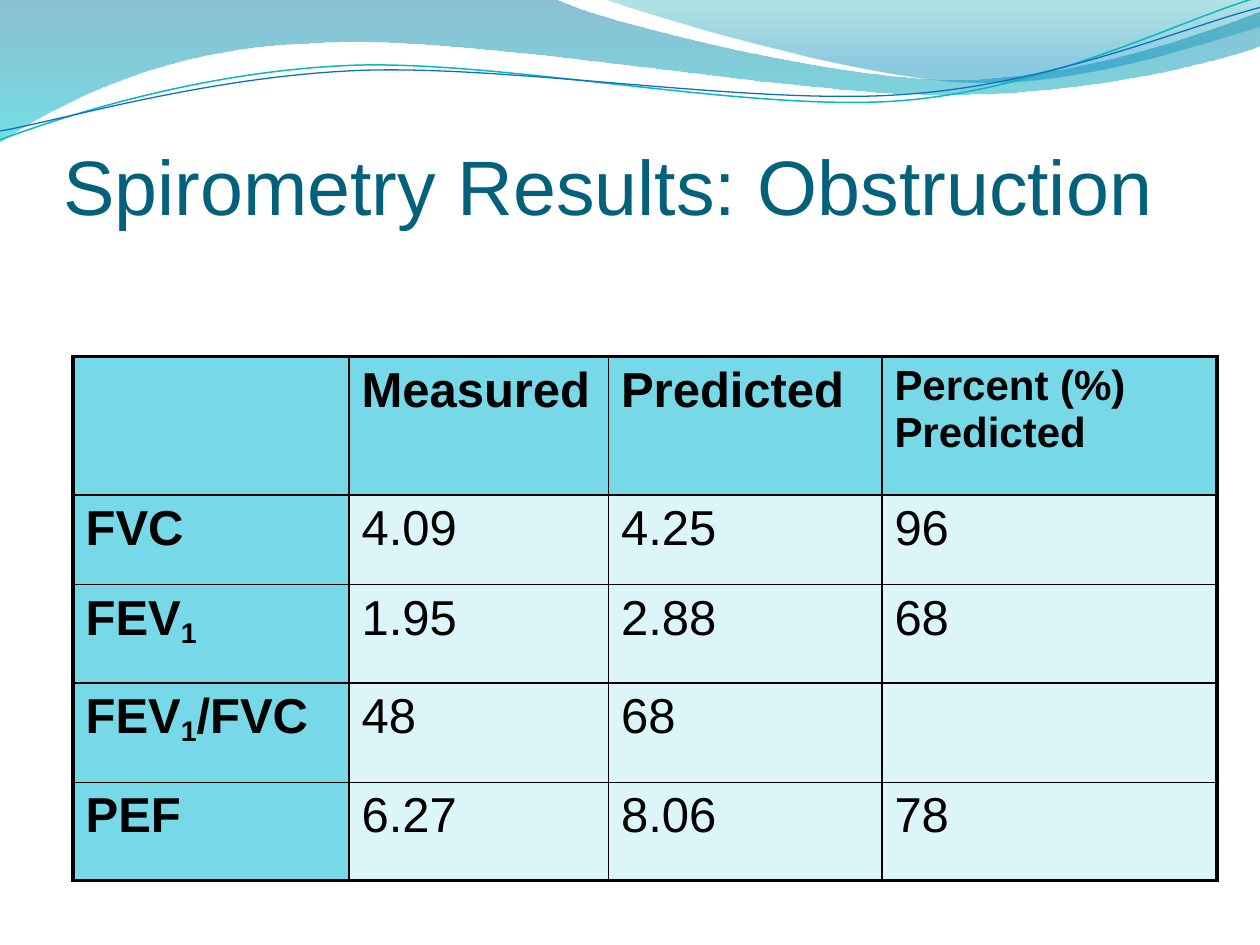
import math
from dataclasses import dataclass
from typing import Optional

import pptx
import pptx.dml.color
import pptx.enum.text
import pptx.oxml
import pptx.oxml.ns
import pptx.util
from pptx.util import Inches


@dataclass(frozen=True)
class Theme:
    font: str = "Arial"
    title: str = "04617B"
    ink: str = "000000"
    label_fill: str = "77D9E8"
    value_fill: str = "DBF5F9"
    title_size: float = 44.1
    body_size: float = 28
    small_size: float = 24
    inner_border: float = 1
    outer_border: float = 2.25


@dataclass(frozen=True)
class Stop:
    position: float
    color: str
    alpha: int  # percent


@dataclass(frozen=True)
class Wave:
    """Path steps hold one point for a straight edge, three for a Bezier curve."""
    start: tuple
    steps: list
    stops: Optional[tuple] = None
    line: Optional[tuple] = None  # colour, width
    tilt: float = 0
    center: tuple = (0, 0)


THEME = Theme()
UNITS = 1000  # outline units per inch

WAVES = [
    Wave((0, 0), [
        [(4.4, -0.01)],
        [(4.76, 0.17), (6.64, 0.63), (7.58, 0.63)],
        [(8.53, 0.63), (9.58, 0.26), (10, 0.09)],
        [(10.01, 0.36)],
        [(9.83, 0.44), (8.7, 0.76), (7.46, 0.75)],
        [(6.22, 0.75), (3.82, 0.28), (2.57, 0.34)],
        [(1.29, 0.36), (0.46, 0.83), (-0.01, 1.13)],
    ], stops=(Stop(0, "0074A1", 45), Stop(1, "00C6CF", 55))),
    Wave((4.79, -0.01), [
        [(5.09, 0.11), (6.82, 0.62), (7.69, 0.65)],
        [(8.56, 0.69), (9.61, 0.32), (10, 0.21)],
        [(10, 0)],
    ], stops=(Stop(0, "00A1A9", 30), Stop(0.8, "008BBF", 45))),
    Wave((0, 1.11), [
        [(0.48, 0.93), (1.58, 0.57), (2.77, 0.52)],
        [(3.95, 0.47), (5.93, 0.89), (7.13, 0.8)],
        [(8.33, 0.71), (9.38, 0.15), (9.98, -0.02)],
    ], line=("0AB8BF", 0.85), tilt=-2.7, center=(4.99, 0.58)),
    Wave((0, 1.04), [
        [(0.47, 0.96), (1.64, 0.61), (2.83, 0.56)],
        [(4.03, 0.51), (5.97, 0.84), (7.17, 0.75)],
        [(8.36, 0.67), (9.41, 0.21), (10, 0.06)],
    ], line=("0F6FC6", 0.75), tilt=-2.7, center=(5, 0.59)),
]

# Text between underscores is subscript
RESULTS = [
    ["", "Measured", "Predicted", "Percent (%) Predicted"],
    ["FVC", "4.09", "4.25", "96"],
    ["FEV_1_", "1.95", "2.88", "68"],
    ["FEV_1_/FVC", "48", "68", ""],
    ["PEF", "6.27", "8.06", "78"],
]
COLUMN_WIDTHS = [2.19, 2.06, 2.17, 2.66]
ROW_HEIGHTS = [1.1, 0.71, 0.78, 0.79, 0.78]


def rgb(color: str) -> pptx.dml.color.RGBColor:
    return pptx.dml.color.RGBColor.from_string(color)


def write(tf, text: str, *, size: float, color: str, bold: bool = False) -> None:
    p = tf.paragraphs[0]
    for i, part in enumerate(text.split("_")):
        if not part:
            continue
        r = p.add_run()
        r.text = part
        r.font.name = THEME.font
        r.font.size = pptx.util.Pt(size)
        r.font.bold = bold
        r.font.color.rgb = rgb(color)
        if i % 2:
            r.font._element.set("baseline", "-16000")


def turn(point: tuple, center: tuple, degrees: float) -> tuple:
    """Turn a point in inches about the centre; give it in outline units."""
    angle = math.radians(degrees)
    x, y = point[0] - center[0], point[1] - center[1]
    return (round(UNITS * (center[0] + x * math.cos(angle) - y * math.sin(angle))),
            round(UNITS * (center[1] + x * math.sin(angle) + y * math.cos(angle))))


def draw_wave(shapes, wave: Wave) -> None:
    # The outline is laid level, then the shape itself is tilted
    start = turn(wave.start, wave.center, -wave.tilt)
    steps = [[turn(q, wave.center, -wave.tilt) for q in step] for step in wave.steps]
    anchors = [step[-1] for step in steps]
    builder = shapes.build_freeform(*start, scale=Inches(1) / UNITS)
    builder.add_line_segments(anchors, close=wave.stops is not None)
    sp = builder.convert_to_shape()

    # Bend the straight segments that have control points
    left, top = (min(values) for values in zip(start, *anchors))
    segments = list(sp._element.iter(pptx.oxml.ns.qn("a:lnTo")))
    for segment, step in zip(segments, steps):
        if len(step) == 3:
            pts = "".join(f'<a:pt x="{x - left}" y="{y - top}"/>' for x, y in step)
            segment.getparent().replace(segment, pptx.oxml.parse_xml(
                f'<a:cubicBezTo {pptx.oxml.ns.nsdecls("a")}>{pts}</a:cubicBezTo>'))

    sp.shadow.inherit = False
    sp.rotation = wave.tilt % 360
    if wave.stops:
        sp.line.fill.background()
        sp.fill.gradient()
        sp.fill.gradient_angle = 270
        for gs, stop in zip(sp.fill.gradient_stops, wave.stops):
            gs.color.rgb = rgb(stop.color)
            gs.position = stop.position
            clr = gs._gs.find(pptx.oxml.ns.qn("a:srgbClr"))
            clr.append(pptx.oxml.parse_xml(
                f'<a:alpha {pptx.oxml.ns.nsdecls("a")} val="{stop.alpha * 1000}"/>'))
    else:
        color, width = wave.line
        sp.fill.background()
        sp.line.color.rgb = rgb(color)
        sp.line.width = pptx.util.Pt(width)


def set_borders(cell, outer: dict) -> None:
    for side, is_outer in outer.items():
        width = pptx.util.Pt(THEME.outer_border if is_outer else THEME.inner_border)
        cell._tc.get_or_add_tcPr().append(pptx.oxml.parse_xml(
            f'<a:ln{side} {pptx.oxml.ns.nsdecls("a")} w="{width}"><a:solidFill>'
            f'<a:srgbClr val="{THEME.ink}"/></a:solidFill></a:ln{side}>'))


def draw_table(shapes, left: float, top: float) -> None:
    rows, cols = len(ROW_HEIGHTS), len(COLUMN_WIDTHS)
    table = shapes.add_table(rows, cols, Inches(left), Inches(top),
                             Inches(sum(COLUMN_WIDTHS)), Inches(sum(ROW_HEIGHTS))).table
    table.first_row = table.horz_banding = False
    for column, width in zip(table.columns, COLUMN_WIDTHS):
        column.width = Inches(width)
    for i, (row, height) in enumerate(zip(table.rows, ROW_HEIGHTS)):
        row.height = Inches(height)
        for j, cell in enumerate(row.cells):
            is_label = i == 0 or j == 0
            is_small = i == 0 and j == cols - 1
            set_borders(cell, {"L": j == 0, "R": j == cols - 1,
                               "T": i == 0, "B": i == rows - 1})
            cell.fill.solid()
            cell.fill.fore_color.rgb = rgb(THEME.label_fill if is_label else THEME.value_fill)
            write(cell.text_frame, RESULTS[i][j], color=THEME.ink, bold=is_label,
                  size=THEME.small_size if is_small else THEME.body_size)


def main() -> None:
    prs = pptx.Presentation()
    prs.slide_width, prs.slide_height = Inches(10), Inches(7.5)
    s = prs.slides.add_slide(prs.slide_layouts[5])

    # Wave decoration along the top
    for wave in WAVES:
        draw_wave(s.shapes, wave)

    # Title, in front of the waves
    title = s.shapes.title
    s.shapes._spTree.append(title._element)
    title.left, title.top = Inches(0.5), Inches(0.5)
    title.width, title.height = Inches(9), Inches(1.33)
    tf = title.text_frame
    tf.margin_left = tf.margin_right = tf.margin_bottom = 0
    tf.vertical_anchor = pptx.enum.text.MSO_ANCHOR.BOTTOM
    tf.auto_size = pptx.enum.text.MSO_AUTO_SIZE.NONE
    tf.paragraphs[0].alignment = pptx.enum.text.PP_ALIGN.LEFT
    write(tf, "Spirometry Results: Obstruction", size=THEME.title_size, color=THEME.title)

    # Spirometry table
    draw_table(s.shapes, 0.58, 2.83)
    prs.save("out.pptx")


if __name__ == "__main__":
    main()
